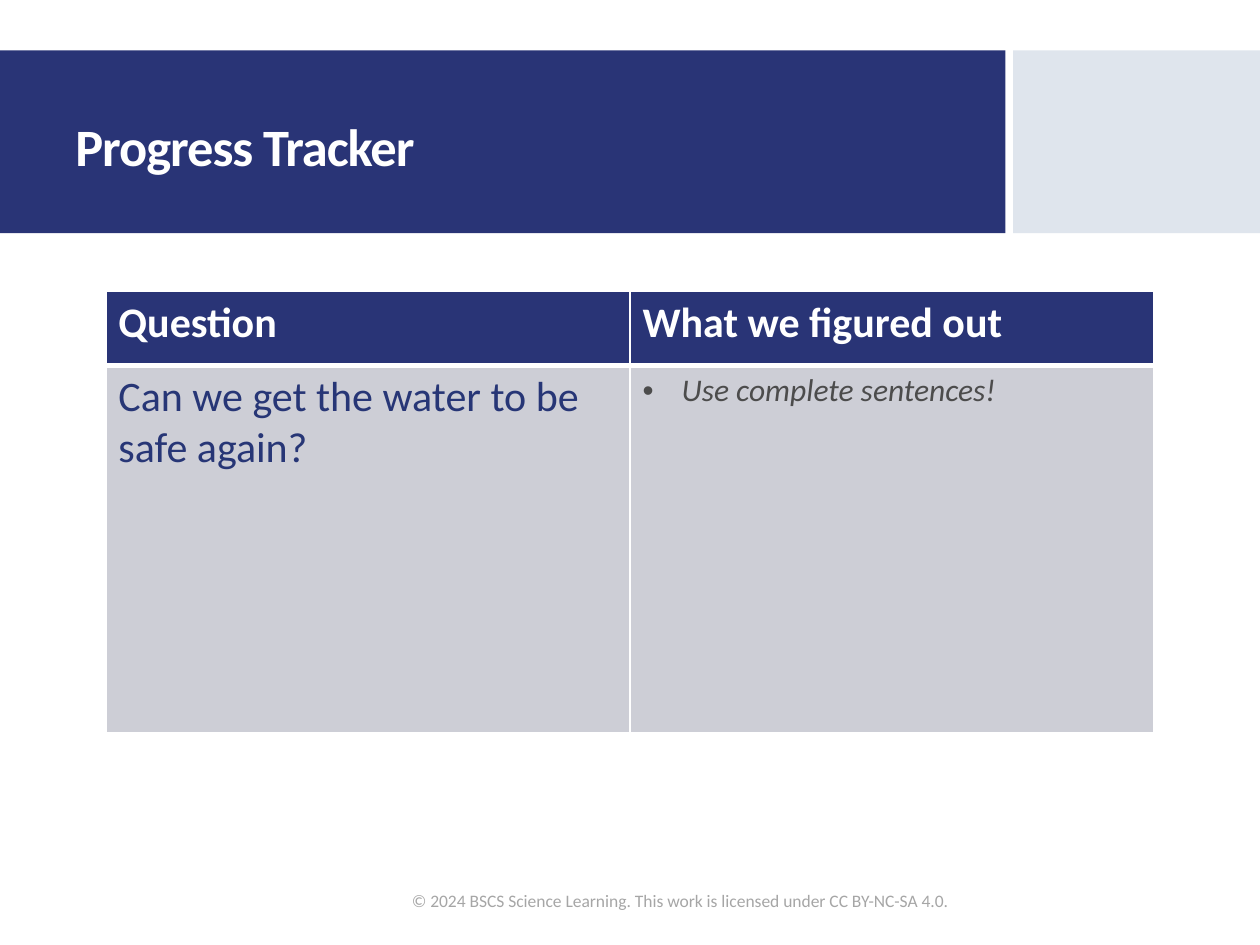
from dataclasses import dataclass

from lxml.etree import SubElement
from pptx import Presentation
from pptx.dml.color import RGBColor
from pptx.enum.shapes import MSO_SHAPE as Shape
from pptx.enum.text import MSO_ANCHOR as Anchor
from pptx.oxml.ns import qn
from pptx.util import Inches, Pt

NAVY = RGBColor(0x29, 0x34, 0x76)
INK = RGBColor(0x27, 0x36, 0x76)
PALE = RGBColor(0xDF, 0xE5, 0xED)
CELL_GRAY = RGBColor(0xCD, 0xCE, 0xD6)
DARK_GRAY = RGBColor(0x4C, 0x4C, 0x4C)
FOOTER_GRAY = RGBColor(0xA6, 0xA6, 0xA6)
WHITE = RGBColor(0xFF, 0xFF, 0xFF)


@dataclass(frozen=True)
class Style:
    size: float
    color: RGBColor
    bold: bool = False
    italic: bool = False


@dataclass(frozen=True)
class Entry:
    text: str
    style: Style
    fill: RGBColor
    bullet: bool = False


HEADER = Style(24, WHITE, bold=True)
ROWS = [
    [Entry("Question", HEADER, NAVY), Entry("What we figured out", HEADER, NAVY)],
    [Entry("Can we get the water to be safe again?", Style(24, INK), CELL_GRAY),
     Entry("Use complete sentences!", Style(18, DARK_GRAY, italic=True),
           CELL_GRAY, bullet=True)],
]
ROW_HEIGHTS = [0.59, 2.92]
COLUMN_WIDTH = 4.16


def style_paragraph(para, style: Style) -> None:
    font = para.font
    font.name = "Calibri"
    font.size = Pt(style.size)
    font.bold = style.bold
    font.italic = style.italic
    font.color.rgb = style.color


def add_band(page, left: float, width: float, color: RGBColor) -> None:
    band = page.shapes.add_shape(
        Shape.RECTANGLE, Inches(left), Inches(0.4), Inches(width), Inches(1.45))
    band.shadow.inherit = False
    band.fill.solid()
    band.fill.fore_color.rgb = color
    band.line.fill.background()


def add_text(page, text: str, left: float, top: float, width: float,
             height: float, style: Style):
    box = page.shapes.add_textbox(
        Inches(left), Inches(top), Inches(width), Inches(height))
    frame = box.text_frame
    frame.word_wrap = True
    frame.vertical_anchor = Anchor.MIDDLE
    para = frame.paragraphs[0]
    para.text = text
    style_paragraph(para, style)
    return para


def add_borders(cell, top: float, bottom: float) -> None:
    properties = cell._tc.get_or_add_tcPr()
    for side, width in {"L": 1, "R": 1, "T": top, "B": bottom}.items():
        line = SubElement(properties, qn(f"a:ln{side}"), w=str(Pt(width)))
        fill = SubElement(line, qn("a:solidFill"))
        SubElement(fill, qn("a:srgbClr"), val=str(WHITE))


def add_bullet(para) -> None:
    properties = para._p.get_or_add_pPr()
    indent = Inches(0.31)
    properties.set("marL", str(indent))
    properties.set("indent", str(-indent))
    SubElement(properties, qn("a:buFont"), typeface="Arial")
    SubElement(properties, qn("a:buChar"), char="•")


def fill_cell(cell, entry: Entry, is_header: bool) -> None:
    # The rule below the header is heavier than the others
    add_borders(cell, top=1 if is_header else 3, bottom=3 if is_header else 1)
    cell.fill.solid()
    cell.fill.fore_color.rgb = entry.fill
    para = cell.text_frame.paragraphs[0]
    para.text = entry.text
    if entry.bullet:
        add_bullet(para)
    style_paragraph(para, entry.style)


def add_tracker(page) -> None:
    columns = len(ROWS[0])
    table = page.shapes.add_table(
        len(ROWS), columns, Inches(0.84), Inches(2.31),
        Inches(COLUMN_WIDTH * columns), Inches(sum(ROW_HEIGHTS))).table
    for r, (entries, height) in enumerate(zip(ROWS, ROW_HEIGHTS)):
        table.rows[r].height = Inches(height)
        for c, entry in enumerate(entries):
            fill_cell(table.cell(r, c), entry, is_header=r == 0)


def main() -> None:
    deck = Presentation()
    deck.slide_width, deck.slide_height = Inches(10), Inches(7.5)
    page = deck.slides.add_slide(deck.slide_layouts[6])

    # Title bands
    add_band(page, 0, 7.98, NAVY)
    add_band(page, 8.04, 1.96, PALE)
    title = add_text(page, "Progress Tracker", 0.5, 0.58, 6.93, 1.22,
                     Style(30, WHITE, bold=True))
    title.line_spacing = 0.9
    title.runs[0].font._element.set("spc", "-60")

    # Question table
    add_tracker(page)

    # Licence line
    add_text(page, "© 2024 BSCS Science Learning. This work is licensed under "
             "CC BY-NC-SA 4.0.", 3.17, 6.95, 4.85, 0.4, Style(10, FOOTER_GRAY))

    deck.save("out.pptx")


if __name__ == "__main__":
    main()
